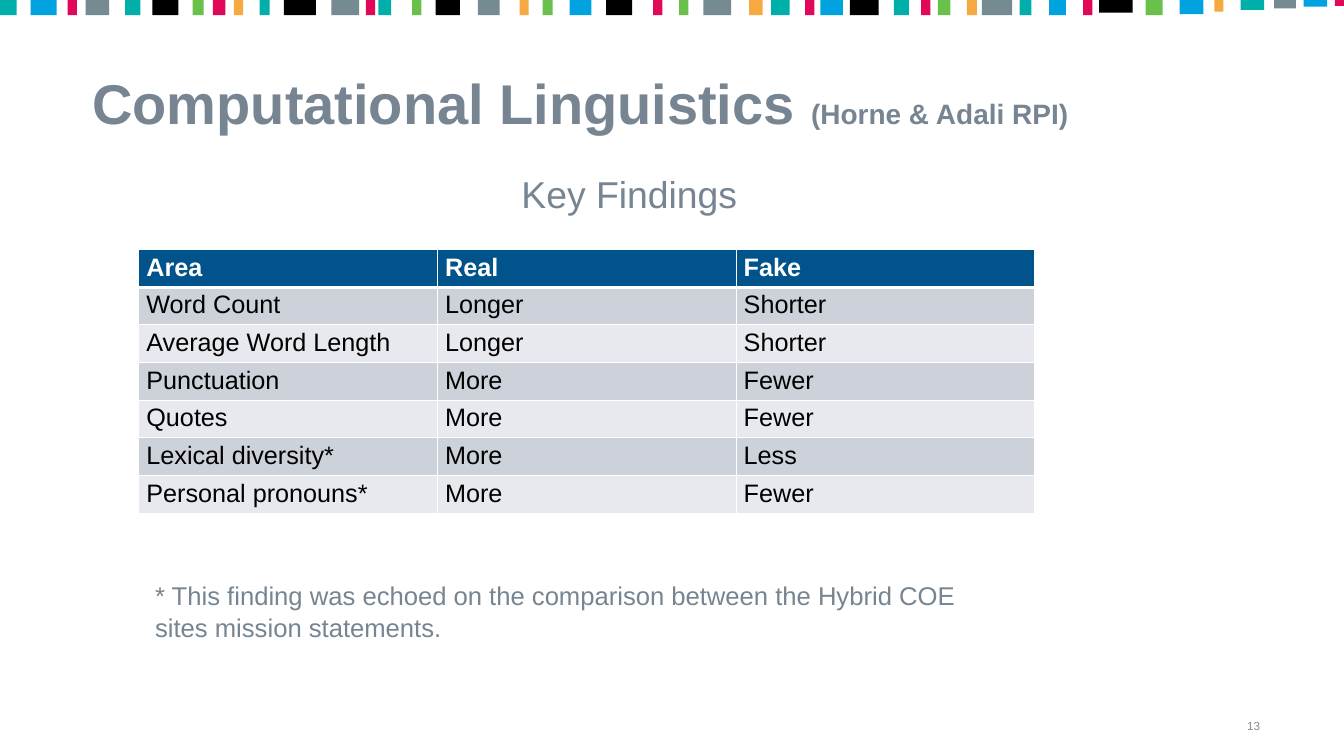
from lxml.etree import SubElement
from pptx import Presentation
from pptx.dml.color import RGBColor
from pptx.enum.shapes import MSO_SHAPE
from pptx.enum.text import MSO_ANCHOR, PP_ALIGN
from pptx.oxml.ns import qn
from pptx.util import Pt

FONT = "Arial"
SLATE = RGBColor(0x76, 0x85, 0x91)
PAGE_GREY = RGBColor(0x8C, 0x8C, 0x8C)
NAVY = RGBColor(0x00, 0x53, 0x8B)
BAND_DARK = RGBColor(0xCC, 0xD1, 0xDA)
BAND_LIGHT = RGBColor(0xE7, 0xE9, 0xEE)
WHITE = RGBColor(0xFF, 0xFF, 0xFF)
BLACK = RGBColor(0x00, 0x00, 0x00)
TEAL = RGBColor(0x00, 0xAF, 0xAA)
BLUE = RGBColor(0x00, 0xA2, 0xE0)
PINK = RGBColor(0xE1, 0x08, 0x59)
STONE = RGBColor(0x76, 0x8A, 0x91)
GREEN = RGBColor(0x69, 0xC1, 0x4C)
ORANGE = RGBColor(0xF6, 0xA9, 0x41)

# Stripes of the top band: left, width, colour
STRIPES = [
    (0, 14.4, TEAL), (26.3, 22.3, BLUE), (58, 7.9, PINK), (73.4, 20.2, STONE),
    (107.3, 13, TEAL), (130.7, 22.3, BLACK), (165.2, 9.4, GREEN),
    (182.5, 10.8, PINK), (200.5, 7.9, ORANGE), (222.5, 8.6, TEAL),
    (243.4, 27.4, BLACK), (284, 23.8, STONE), (313.6, 7.9, PINK),
    (324.4, 10.8, TEAL), (353.2, 7.9, GREEN), (373.3, 20.9, BLACK),
    (409.7, 18.7, STONE), (445.3, 7.9, ORANGE), (465.1, 8.6, GREEN),
    (488.2, 18.7, BLUE), (519.5, 22.3, BLACK), (559.8, 7.9, PINK),
    (582.1, 7.9, GREEN), (603, 23.8, STONE), (642.2, 11.5, ORANGE),
    (661, 15.8, TEAL), (690.1, 7.9, PINK), (703.1, 19.4, BLUE),
    (728.6, 24.5, BLACK), (766.1, 13, TEAL), (789.5, 7.9, PINK),
    (803.9, 10.8, GREEN), (828.7, 8.6, ORANGE), (841.7, 25.9, STONE),
    (874.1, 10.1, TEAL), (899.3, 14.4, BLUE), (928.4, 7.9, PINK),
    (942.1, 28.8, BLACK), (982.1, 14.4, GREEN), (1011.2, 20.2, BLUE),
    (1040.8, 7.9, ORANGE), (1063.4, 20.2, TEAL), (1092.2, 18.7, STONE),
    (1117.4, 20.2, BLUE), (1144.1, 7.9, PINK),
]
# Stripes that are shorter than the band, by position
SHORT_STRIPES = {37: 10.8, 39: 12.2, 40: 10.1, 41: 8.6, 42: 7.2, 43: 5.8, 44: 5}

FINDINGS = [
    ("Area", "Real", "Fake"),
    ("Word Count", "Longer", "Shorter"),
    ("Average Word Length", "Longer", "Shorter"),
    ("Punctuation", "More", "Fewer"),
    ("Quotes", "More", "Fewer"),
    ("Lexical diversity*", "More", "Less"),
    ("Personal pronouns*", "More", "Fewer"),
]


def write(frame, *parts, color=SLATE, bold=False, align=PP_ALIGN.LEFT,
          anchor=MSO_ANCHOR.TOP, spacing=1.0, inset=None):
    """Fill a text frame with one paragraph; each part is (text, size)."""
    frame.word_wrap = True
    frame.vertical_anchor = anchor
    if inset is not None:
        frame.margin_left = frame.margin_right = Pt(inset)
        frame.margin_top = frame.margin_bottom = Pt(inset)
    paragraph = frame.paragraphs[0]
    paragraph.alignment = align
    paragraph.line_spacing = spacing
    paragraph.space_before = Pt(0)
    for text, size in parts:
        run = paragraph.add_run()
        run.text = text
        run.font.name = FONT
        run.font.size = Pt(size)
        run.font.bold = bold
        run.font.color.rgb = color


def add_text(slide, box, text, size, **style):
    label = slide.shapes.add_textbox(*map(Pt, box))
    write(label.text_frame, (text, size), inset=0, **style)


def add_band(slide, left, top, height):
    for index, (offset, width, color) in enumerate(STRIPES):
        stripe = slide.shapes.add_shape(
            MSO_SHAPE.RECTANGLE, Pt(left + offset), Pt(top), Pt(width),
            Pt(SHORT_STRIPES.get(index, height)))
        stripe.shadow.inherit = False
        stripe.fill.solid()
        stripe.fill.fore_color.rgb = color
        stripe.line.fill.background()


def add_title(slide, left, top, width, height):
    title = slide.shapes.title
    title.left, title.top = Pt(left), Pt(top)
    title.width, title.height = Pt(width), Pt(height)
    write(title.text_frame, ("Computational Linguistics ", 48),
          ("(Horne & Adali RPI)", 24), bold=True,
          anchor=MSO_ANCHOR.MIDDLE, spacing=0.9)


def set_borders(cell, bottom):
    properties = cell._tc.get_or_add_tcPr()
    widths = {"a:lnL": 1, "a:lnR": 1, "a:lnT": 1, "a:lnB": bottom}
    for position, (side, width) in enumerate(widths.items()):
        line = SubElement(properties, qn(side), w=str(Pt(width)))
        fill = SubElement(line, qn("a:solidFill"))
        SubElement(fill, qn("a:srgbClr"), val=str(WHITE))
        properties.insert(position, line)  # borders come before the fill


def add_findings(slide, left, top, width, height):
    rows, columns = len(FINDINGS), len(FINDINGS[0])
    table = slide.shapes.add_table(
        rows, columns, Pt(left), Pt(top), Pt(width), Pt(height)).table
    for column in table.columns:
        column.width = Pt(width / columns)
    for r, entries in enumerate(FINDINGS):
        table.rows[r].height = Pt(height / rows)
        header = r == 0
        band = NAVY if header else BAND_DARK if r % 2 else BAND_LIGHT
        for c, entry in enumerate(entries):
            cell = table.cell(r, c)
            cell.margin_left = cell.margin_right = Pt(6.5)
            cell.margin_top = cell.margin_bottom = Pt(3.2)
            cell.fill.solid()
            cell.fill.fore_color.rgb = band
            # The header rule is thick and shared with the row below
            set_borders(cell, bottom=3 if header else 1)
            write(cell.text_frame, (entry, 21.6), bold=header,
                  color=WHITE if header else BLACK)


def main():
    deck = Presentation()
    deck.slide_width, deck.slide_height = Pt(1152), Pt(648)
    slide = deck.slides.add_slide(deck.slide_layouts[5])

    # Top band and title
    add_band(slide, 0, 0, 13)
    add_title(slide, 72, 38, 1009, 107)
    # Page number
    add_text(slide, (1011, 600.5, 69, 28), "13", 10, color=PAGE_GREY,
             align=PP_ALIGN.RIGHT, anchor=MSO_ANCHOR.BOTTOM)
    # Findings table with its heading and footnote
    add_findings(slide, 119, 214, 768, 219.1)
    add_text(slide, (155.5, 145, 768, 69), "Key Findings", 32,
             align=PP_ALIGN.CENTER, spacing=1.05)
    add_text(slide, (133, 495.5, 731.5, 60.5),
             "* This finding was echoed on the comparison between the "
             "Hybrid COE sites mission statements.", 22, spacing=1.05)

    deck.save("out.pptx")


if __name__ == "__main__":
    main()
